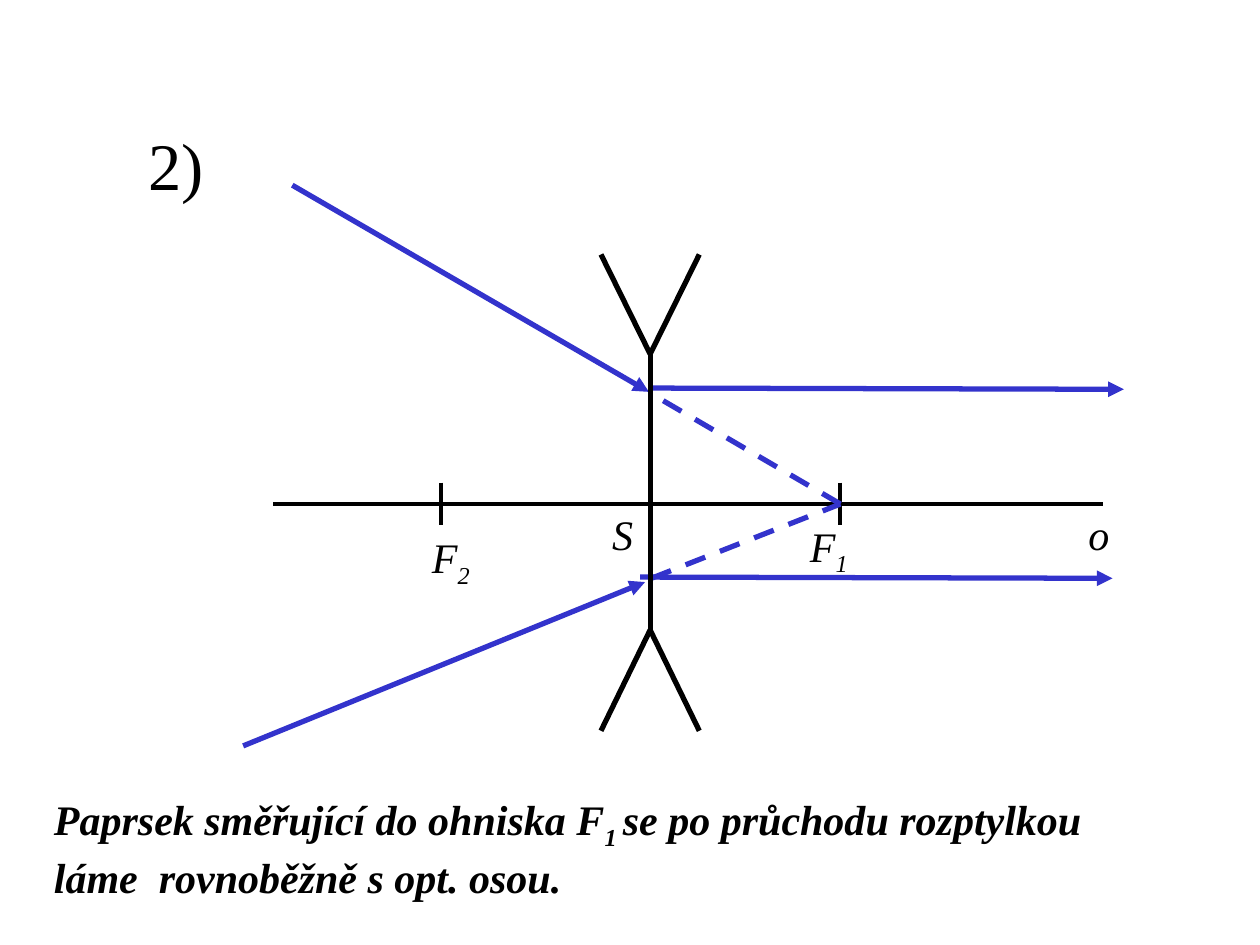
from lxml.etree import SubElement
from pptx import Presentation
from pptx.dml.color import RGBColor
from pptx.enum.dml import MSO_LINE
from pptx.enum.shapes import MSO_CONNECTOR
from pptx.enum.text import MSO_ANCHOR, PP_ALIGN
from pptx.oxml.ns import qn
from pptx.util import Inches, Pt

BLACK = RGBColor(0x00, 0x00, 0x00)
BLUE = RGBColor(0x33, 0x33, 0xCC)


class Diagram:
    font_name = "Times New Roman"

    def __init__(self, page):
        self.page = page

    def line(self, start, end, color=BLACK, width=3, dashed=False, arrow=False):
        ends = [Inches(value) for value in (*start, *end)]
        connector = self.page.shapes.add_connector(MSO_CONNECTOR.STRAIGHT, *ends)
        connector.line.color.rgb = color
        connector.line.width = Pt(width)
        if dashed:
            connector.line.dash_style = MSO_LINE.DASH
        if arrow:
            SubElement(connector.line._ln, qn("a:tailEnd"), type="triangle")
        SubElement(connector._element.spPr, qn("a:effectLst"))

    def ray(self, start, end):
        self.line(start, end, BLUE, arrow=True)

    def extension(self, start, end):
        self.line(start, end, BLUE, dashed=True)

    def text(self, left, top, width, height, runs, size=24, bold=False,
             italic=True, align=PP_ALIGN.LEFT, anchor=MSO_ANCHOR.TOP):
        """Each run is a pair: wording and whether it is a subscript."""
        box = self.page.shapes.add_textbox(
            Inches(left), Inches(top), Inches(width), Inches(height))
        frame = box.text_frame
        frame.word_wrap = True
        frame.vertical_anchor = anchor
        para = frame.paragraphs[0]
        para.alignment = align
        for wording, subscript in runs:
            span = para.add_run()
            span.text = wording
            span.font.name = self.font_name
            span.font.size = Pt(size)
            span.font.bold = bold
            span.font.italic = italic
            span.font.color.rgb = BLACK
            if subscript:
                span.font._element.set("baseline", "-25000")


def main():
    deck = Presentation()
    deck.slide_width, deck.slide_height = Inches(10), Inches(7.5)
    page = deck.slides.add_slide(deck.slide_layouts[6])
    diagram = Diagram(page)

    # Item number and explanation
    diagram.text(0.35, 0.84, 2.1, 0.92, [("2)", False)], size=38, italic=False,
                 align=PP_ALIGN.CENTER, anchor=MSO_ANCHOR.MIDDLE)
    diagram.text(0.33, 6.25, 9, 0.9, [
        ("Paprsek směřující do ohniska F", False),
        ("1 ", True),
        ("se po průchodu rozptylkou láme  rovnoběžně s opt. osou.", False),
    ], bold=True)

    # Optical axis with the two focal points
    axis_y = 4
    focus_x = 6.67
    diagram.line((2.17, axis_y), (8.75, axis_y), width=2.25)
    for x in (3.5, focus_x):
        diagram.line((x, axis_y - 0.17), (x, axis_y + 0.17), width=2.25)

    # Incoming and refracted rays
    diagram.ray((2.32, 1.47), (5.15, 3.11))
    diagram.ray((5.17, 3.08), (8.92, 3.09))
    diagram.ray((1.93, 5.92), (5.12, 4.62))
    diagram.ray((5.08, 4.58), (8.83, 4.59))

    # Extensions of the rays to the focal point
    diagram.extension((focus_x, axis_y), (5.16, 3.12))
    diagram.extension((5.17, 4.59), (focus_x, axis_y))

    # Diverging lens
    lens_x, lens_top, lens_bottom = 5.16, 2.81, 5
    diagram.line((lens_x, lens_top), (lens_x, lens_bottom))
    for tip_x in (lens_x - 0.39, lens_x + 0.39):
        diagram.line((tip_x, lens_top - 0.79), (lens_x, lens_top))
        diagram.line((lens_x, lens_bottom), (tip_x, lens_bottom + 0.8))

    # Point and axis labels
    diagram.text(3.33, 4.17, 0.81, 0.5, [("F", False), ("2", True)])
    diagram.text(6.33, 4.08, 0.71, 0.51, [("F", False), ("1", True)])
    diagram.text(8.54, 3.99, 0.71, 0.51, [("o", False)])
    diagram.text(4.76, 3.99, 0.47, 0.5, [("S", False)])

    deck.save("out.pptx")


if __name__ == "__main__":
    main()
